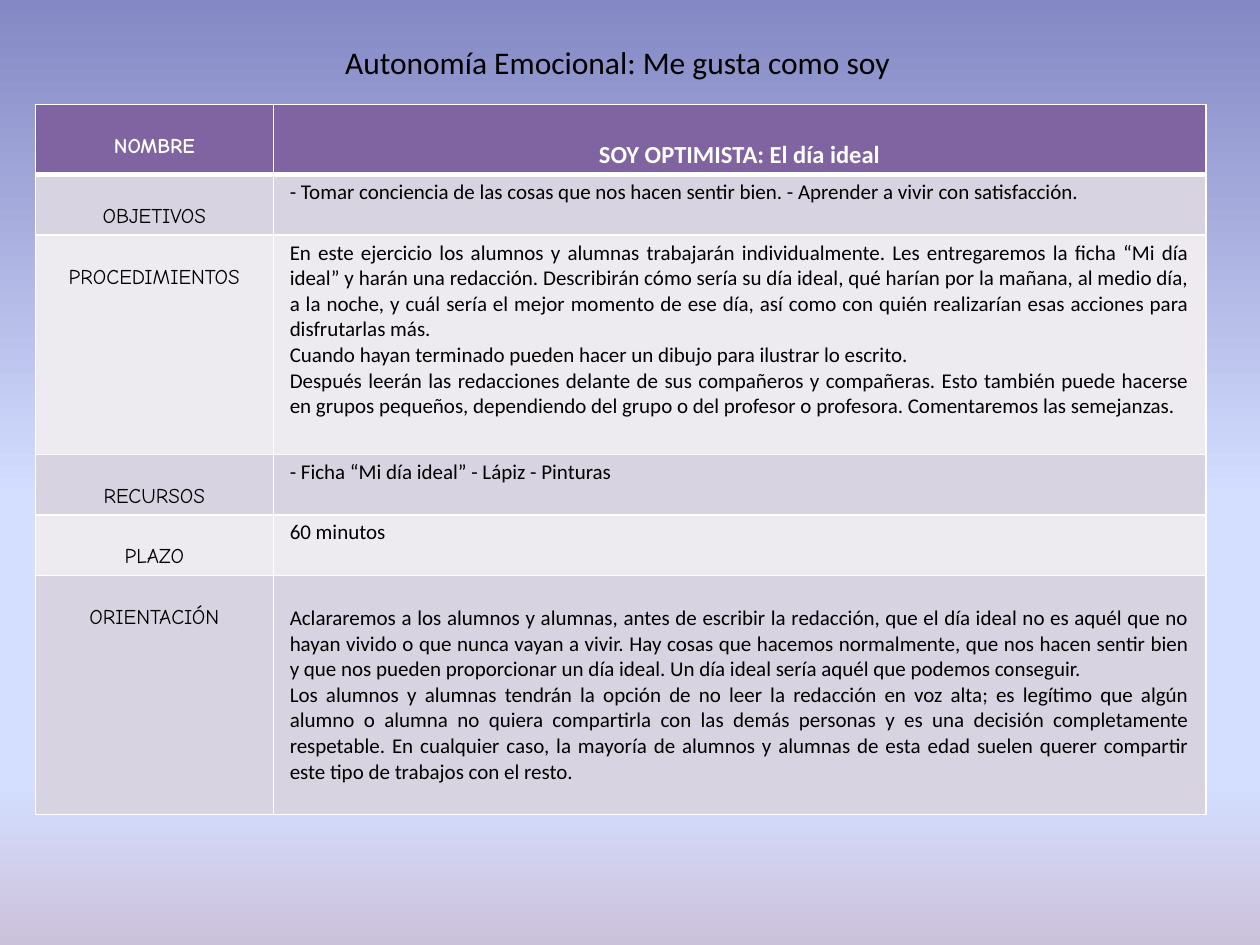
from dataclasses import dataclass

from lxml.etree import SubElement
from pptx import Presentation
from pptx.dml.color import RGBColor
from pptx.enum.text import MSO_AUTO_SIZE, PP_ALIGN
from pptx.oxml.ns import qn
from pptx.util import Inches, Pt


@dataclass(frozen=True)
class Theme:
    """Colours, fonts and type sizes of the slide."""
    background: tuple = ((0, "8488C4"), (53, "D4DEFF"), (83, "D4DEFF"), (100, "CCC1DA"))
    header: str = "8064A2"
    bands: tuple = ("D8D3E0", "EDEAF0")
    white: str = "FFFFFF"
    black: str = "000000"
    text_font: str = "Calibri"
    label_font: str = "Comic Neue"
    title_size: int = 18
    header_size: int = 14
    body_size: int = 12


THEME = Theme()
TITLE = "Autonomía Emocional: Me gusta como soy"
COLUMN_WIDTHS = (1.89, 7.4)
ROWS = (
    (0.55, "NOMBRE", ("SOY OPTIMISTA: El día ideal",)),
    (0.48, "OBJETIVOS", (
        "- Tomar conciencia de las cosas que nos hacen sentir bien. "
        "- Aprender a vivir con satisfacción.",)),
    (1.74, "PROCEDIMIENTOS", (
        "En este ejercicio los alumnos y alumnas trabajarán individualmente. Les "
        "entregaremos la ficha “Mi día ideal” y harán una redacción. Describirán cómo "
        "sería su día ideal, qué harían por la mañana, al medio día, a la noche, y cuál "
        "sería el mejor momento de ese día, así como con quién realizarían esas acciones "
        "para disfrutarlas más.",
        "Cuando hayan terminado pueden hacer un dibujo para ilustrar lo escrito.",
        "Después leerán las redacciones delante de sus compañeros y compañeras. Esto "
        "también puede hacerse en grupos pequeños, dependiendo del grupo o del profesor "
        "o profesora. Comentaremos las semejanzas.")),
    (0.48, "RECURSOS", ("- Ficha “Mi día ideal” - Lápiz - Pinturas",)),
    (0.48, "PLAZO", ("60 minutos",)),
    (1.9, "ORIENTACIÓN", (
        "Aclararemos a los alumnos y alumnas, antes de escribir la redacción, que el día "
        "ideal no es aquél que no hayan vivido o que nunca vayan a vivir. Hay cosas que "
        "hacemos normalmente, que nos hacen sentir bien y que nos pueden proporcionar un "
        "día ideal. Un día ideal sería aquél que podemos conseguir.",
        "Los alumnos y alumnas tendrán la opción de no leer la redacción en voz alta; es "
        "legítimo que algún alumno o alumna no quiera compartirla con las demás personas "
        "y es una decisión completamente respetable. En cualquier caso, la mayoría de "
        "alumnos y alumnas de esta edad suelen querer compartir este tipo de trabajos "
        "con el resto.")),
)


def write_text(tf, paragraphs, *, size=THEME.body_size, font=THEME.text_font,
               color=THEME.black, bold=False, align=PP_ALIGN.LEFT):
    """Fill a text frame with one formatted run per paragraph."""
    for i, text in enumerate(paragraphs):
        p = tf.paragraphs[0] if i == 0 else tf.add_paragraph()
        p.alignment = align
        r = p.add_run()
        r.text = text
        r.font.size = Pt(size)
        r.font.name = font
        r.font.bold = bold
        r.font.color.rgb = RGBColor.from_string(color)


def add_solid_fill(parent, color):
    """Append a solid fill to an XML element."""
    SubElement(SubElement(parent, qn("a:solidFill")), qn("a:srgbClr"), val=color)


def set_background(s):
    """Paint the vertical gradient behind the slide."""
    fill = s.background.fill
    fill.gradient()
    fill.gradient_angle = 270
    stops = next(s.element.iter(qn("a:gsLst")))
    for stop in list(stops):
        stops.remove(stop)
    for position, color in THEME.background:
        gs = SubElement(stops, qn("a:gs"), pos=str(position * 1000))
        SubElement(gs, qn("a:srgbClr"), val=color)


def style_cell(cell, fill, top_margin, top_line=1, bottom_line=1):
    """Set the margins, white borders and fill of a cell."""
    cell.margin_left = cell.margin_right = Inches(0.13)
    cell.margin_top, cell.margin_bottom = Inches(top_margin), Inches(0.04)
    tcPr = cell._tc.get_or_add_tcPr()
    for side, width in (("L", 1), ("R", 1), ("T", top_line), ("B", bottom_line)):
        add_solid_fill(SubElement(tcPr, qn(f"a:ln{side}"), w=str(Pt(width))), THEME.white)
    cell.fill.solid()
    cell.fill.fore_color.rgb = RGBColor.from_string(fill)


def add_title(s):
    """Add the heading above the table."""
    sp = s.shapes.add_textbox(Inches(2.64), Inches(0.29), Inches(4.88), Inches(0.4))
    tf = sp.text_frame
    tf.word_wrap = True
    tf.auto_size = MSO_AUTO_SIZE.SHAPE_TO_FIT_TEXT
    write_text(tf, [TITLE], size=THEME.title_size)


def add_activity_table(s):
    """Add the table that describes the activity."""
    height = sum(row[0] for row in ROWS)
    table = s.shapes.add_table(len(ROWS), len(COLUMN_WIDTHS), Inches(0.28), Inches(0.83),
                               Inches(sum(COLUMN_WIDTHS)), Inches(height)).table
    for column, width in zip(table.columns, COLUMN_WIDTHS):
        column.width = Inches(width)
    for i, (row_height, label, paragraphs) in enumerate(ROWS):
        table.rows[i].height = Inches(row_height)
        is_header = i == 0
        fill = THEME.header if is_header else THEME.bands[(i - 1) % 2]
        color = THEME.white if is_header else THEME.black
        lines = {"top_line": 3 if i == 1 else 1, "bottom_line": 3 if is_header else 1}
        label_cell, text_cell = table.cell(i, 0), table.cell(i, 1)
        style_cell(label_cell, fill, 0.24, **lines)
        write_text(label_cell.text_frame, [label], font=THEME.label_font, color=color,
                   bold=is_header, align=PP_ALIGN.CENTER)
        text_top = 0.28 if is_header else 0.24 if i == len(ROWS) - 1 else 0.04
        style_cell(text_cell, fill, text_top, **lines)
        write_text(text_cell.text_frame, paragraphs, color=color, bold=is_header,
                   size=THEME.header_size if is_header else THEME.body_size,
                   align=PP_ALIGN.CENTER if is_header else PP_ALIGN.JUSTIFY)


def main():
    """Build and save the slide."""
    prs = Presentation()
    prs.slide_width, prs.slide_height = Inches(10), Inches(7.5)
    s = prs.slides.add_slide(prs.slide_layouts[6])
    set_background(s)
    add_activity_table(s)
    add_title(s)
    prs.save("out.pptx")


if __name__ == "__main__":
    main()
